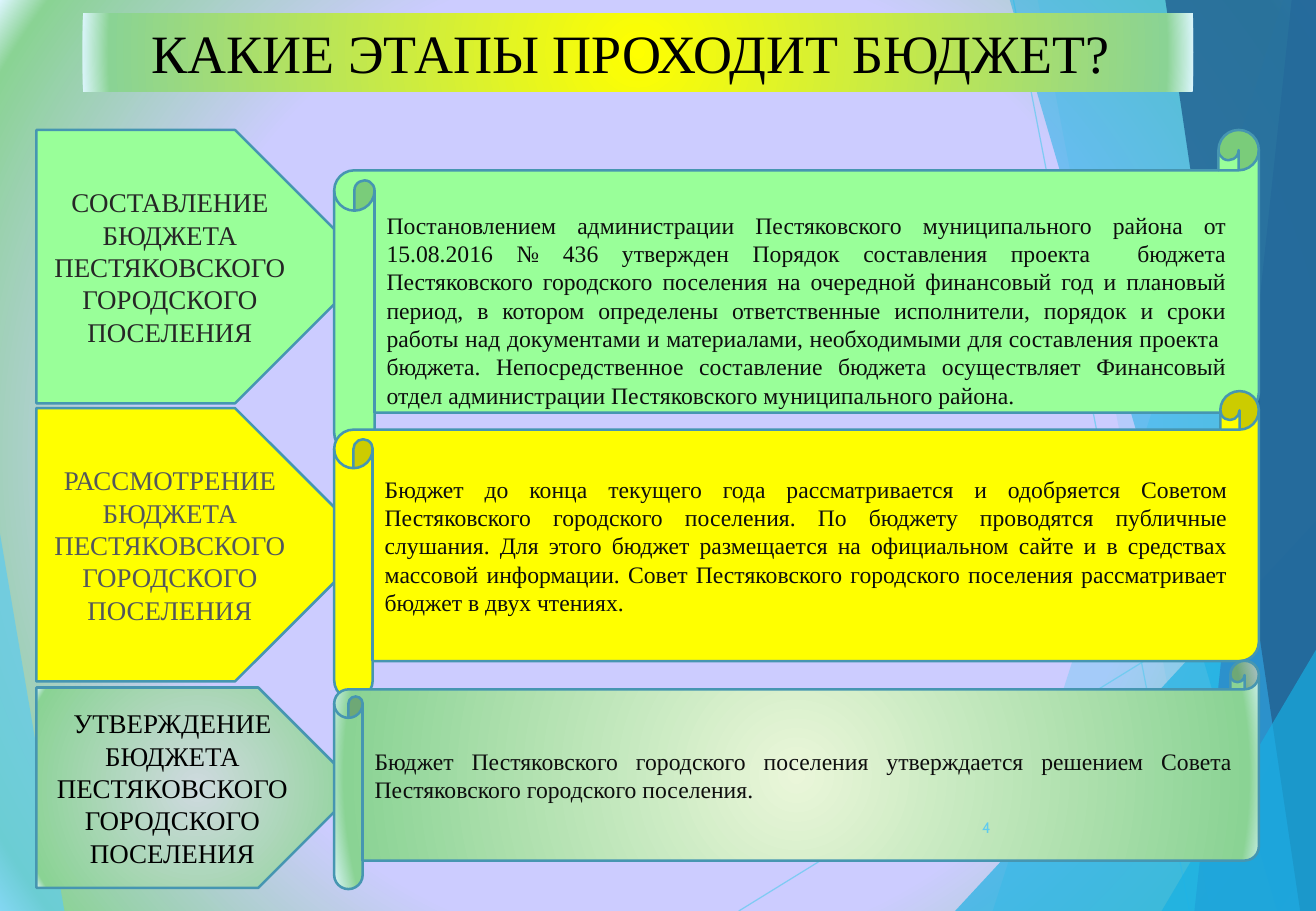
from dataclasses import dataclass

from lxml.etree import SubElement
from pptx import Presentation
from pptx.dml.color import RGBColor
from pptx.enum.shapes import MSO_CONNECTOR, MSO_SHAPE
from pptx.enum.text import MSO_ANCHOR as Anchor, MSO_AUTO_SIZE, PP_ALIGN as Align
from pptx.oxml.ns import qn
from pptx.util import Inches, Pt

WIDTH, HEIGHT = 10.83, 7.5
SERIF = "Times New Roman"
OUTLINE = "4696B1"
SKY, AZURE = "5FCBEF", "17B0E4"
SCROLL_LEFT, SCROLL_WIDTH = 2.75, 7.61


@dataclass(frozen=True)
class Glow:
    core: str
    reach: int = 0


@dataclass(frozen=True)
class Facet:
    points: tuple
    color: str
    opacity: int


@dataclass(frozen=True)
class Stage:
    name: tuple
    details: str
    arrow_box: tuple
    scroll_top: float
    scroll_height: float
    arrow_paint: str | Glow
    scroll_paint: str | Glow
    name_color: str
    scroll_inset: float = 0.05


FACETS = [
    Facet(((0, 4.39), (0.53, HEIGHT), (0, HEIGHT)), SKY, 70),
    Facet(((10.56, 0), (8.17, HEIGHT), (WIDTH, HEIGHT), (WIDTH, 0)), SKY, 36),
    Facet(((8.54, 0), (9.96, HEIGHT), (WIDTH, HEIGHT), (WIDTH, 0)), SKY, 20),
    Facet(((7.86, HEIGHT), (WIDTH, 4.29), (WIDTH, HEIGHT)), AZURE, 66),
    Facet(((8.31, 0), (10.51, HEIGHT), (WIDTH, HEIGHT), (WIDTH, 0)), AZURE, 50),
    Facet(((10.63, 0), (9.83, HEIGHT), (WIDTH, HEIGHT), (WIDTH, 0)), "2E83C3", 70),
    Facet(((9.59, 0), (10.7, HEIGHT), (WIDTH, HEIGHT), (WIDTH, 0)), "226292", 82),
    Facet(((9.56, HEIGHT), (WIDTH, 5.35), (WIDTH, HEIGHT)), AZURE, 66),
]
RAYS = [(6.08, HEIGHT, WIDTH, 4.57), (8.34, 0, 9.79, HEIGHT)]

STAGES = [
    Stage(
        ("СОСТАВЛЕНИЕ БЮДЖЕТА ПЕСТЯКОВСКОГО ГОРОДСКОГО ПОСЕЛЕНИЯ",),
        "Постановлением администрации Пестяковского муниципального района от "
        "15.08.2016 № 436 утвержден Порядок составления проекта  бюджета "
        "Пестяковского городского поселения на очередной финансовый год и плановый "
        "период, в котором определены ответственные исполнители, порядок и сроки "
        "работы над документами и материалами, необходимыми для составления проекта  "
        "бюджета. Непосредственное составление бюджета осуществляет Финансовый "
        "отдел администрации Пестяковского муниципального района.",
        (0.3, 1.07, 2.76, 2.25), 1.07, 2.66, "99FF99", "99FF99", "262626", 0.35,
    ),
    Stage(
        ("РАССМОТРЕНИЕ БЮДЖЕТА", "ПЕСТЯКОВСКОГО ГОРОДСКОГО ПОСЕЛЕНИЯ"),
        "Бюджет до конца текущего года рассматривается и одобряется Советом "
        "Пестяковского городского поселения. По бюджету проводятся публичные "
        "слушания. Для этого бюджет размещается на официальном сайте и в средствах "
        "массовой информации. Совет Пестяковского городского поселения рассматривает "
        "бюджет в двух чтениях.",
        (0.3, 3.36, 2.76, 2.25), 3.22, 2.54, "FFFF00", "FFFF00", "53575C",
    ),
    Stage(
        ("УТВЕРЖДЕНИЕ БЮДЖЕТА ПЕСТЯКОВСКОГО ГОРОДСКОГО ПОСЕЛЕНИЯ",),
        "Бюджет Пестяковского городского поселения утверждается решением Совета "
        "Пестяковского городского поселения.",
        (0.3, 5.66, 2.65, 1.65), 5.44, 1.88, Glow("CFDADF"), Glow("EAF6D9"), "000000",
    ),
]


def rgb(color: str) -> RGBColor:
    return RGBColor.from_string(color)


def set_opacity(element, percent: int) -> None:
    color = element.find(".//" + qn("a:srgbClr"))
    SubElement(color, qn("a:alpha"), val=str(percent * 1000))


def paint(fill, element, color: str | Glow) -> None:
    if isinstance(color, str):
        fill.solid()
        fill.fore_color.rgb = rgb(color)
        return
    fill.gradient()
    gradient = element.find(".//" + qn("a:gradFill"))
    for child in list(gradient):
        gradient.remove(child)
    stops = SubElement(gradient, qn("a:gsLst"))
    for position, tone in ((color.reach, color.core), (95, "8AD394"), (100, "DDF6FE")):
        stop = SubElement(stops, qn("a:gs"), pos=str(position * 1000))
        SubElement(stop, qn("a:srgbClr"), val=tone)
    circle = SubElement(gradient, qn("a:path"), path="circle")
    SubElement(circle, qn("a:fillToRect"), l="50000", t="50000", r="50000", b="50000")


def write(shape, *paragraphs: str, size: float, color: str, font: str = SERIF,
          align: Align = Align.CENTER, inset_top: float = 0.05) -> None:
    frame = shape.text_frame
    frame.word_wrap = True
    frame.auto_size = MSO_AUTO_SIZE.NONE
    frame.vertical_anchor = Anchor.MIDDLE
    frame.margin_top = Inches(inset_top)
    frame.text = "\n".join(paragraphs)
    for paragraph in frame.paragraphs:
        paragraph.alignment = align
        for run in paragraph.runs:
            run.font.size = Pt(size)
            run.font.name = font
            run.font.color.rgb = rgb(color)


def draw_facet(slide, facet: Facet) -> None:
    start, *rest = [(Inches(x), Inches(y)) for x, y in facet.points]
    builder = slide.shapes.build_freeform(*start)
    builder.add_line_segments(rest, close=True)
    shape = builder.convert_to_shape()
    shape.shadow.inherit = False
    paint(shape.fill, shape._element, facet.color)
    set_opacity(shape._element.spPr, facet.opacity)
    shape.line.fill.background()


def draw_ray(slide, ends: tuple) -> None:
    ray = slide.shapes.add_connector(MSO_CONNECTOR.STRAIGHT, *map(Inches, ends))
    ray.line.color.rgb = rgb(SKY)
    ray.line.width = Pt(0.75)
    set_opacity(ray._element.spPr, 70)
    SubElement(ray._element.spPr, qn("a:effectLst"))


def draw_panel(slide, kind: MSO_SHAPE, box: tuple, color: str | Glow):
    panel = slide.shapes.add_shape(kind, *map(Inches, box))
    panel.shadow.inherit = False
    paint(panel.fill, panel._element, color)
    panel.line.color.rgb = rgb(OUTLINE)
    panel.line.width = Pt(1.5)
    return panel


def draw_heading(slide) -> None:
    heading = slide.shapes.title
    slide.shapes._spTree.append(heading._element)
    heading.left, heading.top = Inches(0.68), Inches(0.11)
    heading.width, heading.height = Inches(9.14), Inches(0.64)
    paint(heading.fill, heading._element, Glow("FFFF00"))
    write(heading, "КАКИЕ ЭТАПЫ ПРОХОДИТ БЮДЖЕТ? ", size=32, color="000000")


def main() -> None:
    deck = Presentation()
    deck.slide_width, deck.slide_height = Inches(WIDTH), Inches(HEIGHT)
    slide = deck.slides.add_slide(deck.slide_layouts[5])
    paint(slide.background.fill, slide._element, Glow("CCCCFF", 62))

    for ends in RAYS:
        draw_ray(slide, ends)
    for facet in FACETS:
        draw_facet(slide, facet)
    draw_heading(slide)

    for stage in STAGES:
        arrow = draw_panel(slide, MSO_SHAPE.PENTAGON, stage.arrow_box, stage.arrow_paint)
        write(arrow, *stage.name, size=16, color=stage.name_color)
    for stage in STAGES:
        box = (SCROLL_LEFT, stage.scroll_top, SCROLL_WIDTH, stage.scroll_height)
        scroll = draw_panel(slide, MSO_SHAPE.HORIZONTAL_SCROLL, box, stage.scroll_paint)
        write(scroll, stage.details, size=14, color="0D0D0D", align=Align.JUSTIFY,
              inset_top=stage.scroll_inset)

    page_number = slide.shapes.add_textbox(*map(Inches, (7.64, 6.61, 0.61, 0.4)))
    write(page_number, "4", size=9, color=SKY, font="Cabin", align=Align.RIGHT)
    deck.save("out.pptx")


if __name__ == "__main__":
    main()
